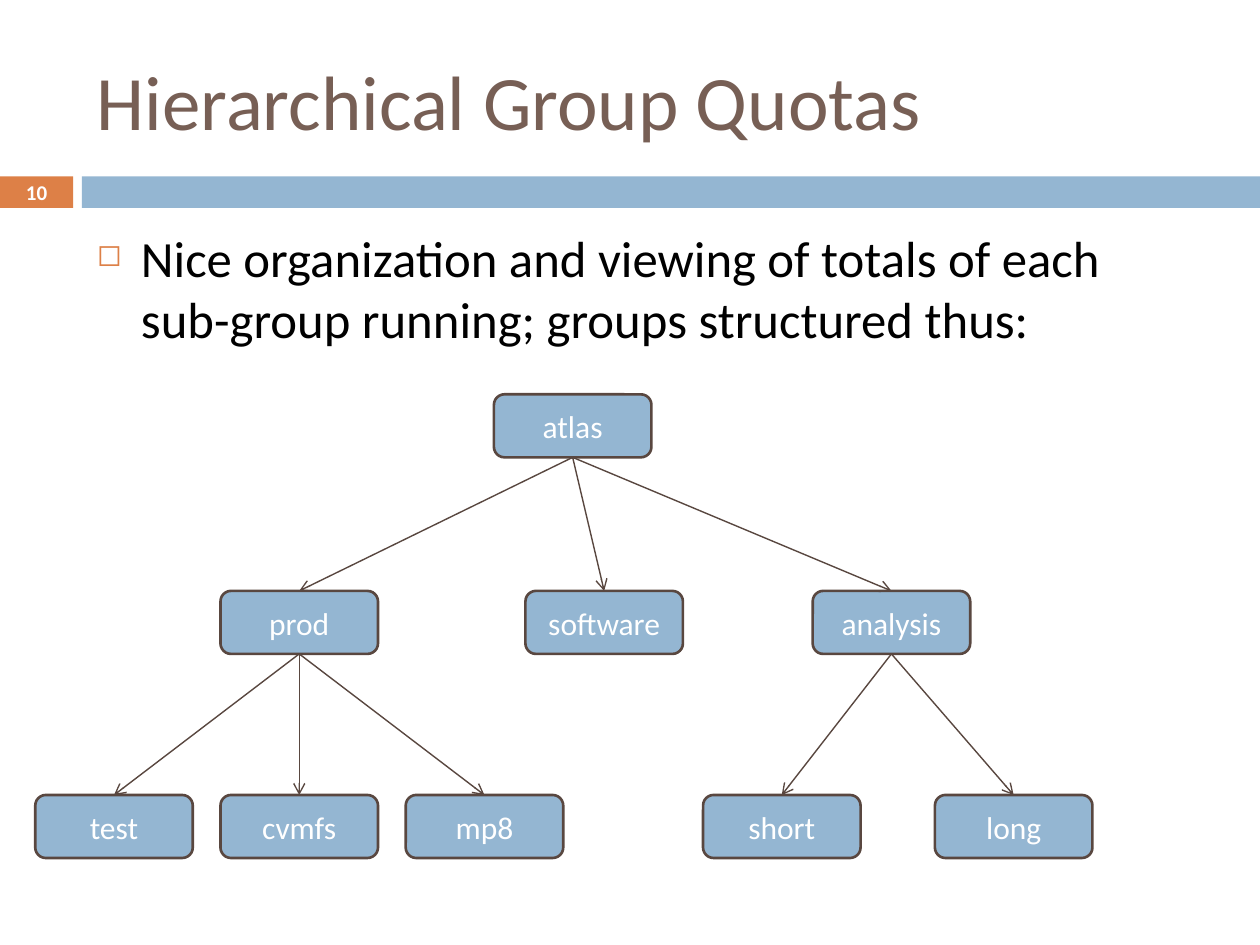
from lxml import etree
from pptx import Presentation
from pptx.dml.color import RGBColor
from pptx.enum import shapes as sh, text as tx
from pptx.oxml.ns import qn
from pptx.util import Inches, Pt

BLUE, ORANGE, BROWN = "94B6D2", "DD8047", "594740"


def paint(fmt, color):
    """Give a fill or a font a solid colour from a hex string."""
    if hasattr(fmt, "solid"):
        fmt.solid()
        fmt.fore_color.rgb = RGBColor.from_string(color)
    else:
        fmt.color.rgb = RGBColor.from_string(color)


def write(shape, words, size, color, align=tx.PP_ALIGN.CENTER):
    """Put one run of Calibri in a shape and return its paragraph."""
    frame = shape.text_frame
    frame.word_wrap = True
    frame.vertical_anchor = tx.MSO_ANCHOR.MIDDLE
    para = frame.paragraphs[0]
    para.alignment = align
    run = para.add_run()
    run.text = words
    run.font.name = "Calibri"
    run.font.size = Pt(size)
    paint(run.font, color)
    return para


prs = Presentation()
prs.slide_width, prs.slide_height = Inches(10), Inches(7.5)
slide = prs.slides.add_slide(prs.slide_layouts[6])
parts = slide.shapes

# Band under the title, with the slide number at its left
for left, width, color in [(0, 0.58, ORANGE), (0.65, 9.35, BLUE)]:
    bar = parts.add_shape(sh.MSO_SHAPE.RECTANGLE, Inches(left), Inches(1.4),
                          Inches(width), Inches(0.25))
    bar.shadow.inherit = False
    paint(bar.fill, color)
    bar.line.fill.background()

num = parts.add_textbox(Inches(0), Inches(1.39), Inches(0.58), Inches(0.27))
num.text_frame.margin_top = num.text_frame.margin_bottom = 0
write(num, "10", 12, "FFFFFF").runs[0].font.bold = True

# Title and bullet
title = parts.add_textbox(Inches(0.67), Inches(0.25), Inches(8.92), Inches(1.08))
write(title, "Hierarchical Group Quotas", 44, "775F55", tx.PP_ALIGN.LEFT)

body = parts.add_textbox(Inches(0.67), Inches(1.75), Inches(8.92), Inches(4.92))
para = write(body, "Nice organization and viewing of totals of each "
             "sub-group running; groups structured thus:",
             29, "000000", tx.PP_ALIGN.LEFT)
body.text_frame.vertical_anchor = tx.MSO_ANCHOR.TOP
para.space_before = Pt(7)
props = para._p.get_or_add_pPr()
props.set("marL", str(Inches(0.35)))
props.set("indent", str(-Inches(0.35)))
tint = etree.SubElement(props, qn("a:buClr"))
etree.SubElement(tint, qn("a:srgbClr"), val=ORANGE)
etree.SubElement(props, qn("a:buSzPct"), val="60000")
etree.SubElement(props, qn("a:buChar"), char="◻")

# Group tree: name, parent, left edge, level
rows = [3.13, 4.69, 6.31]
groups = [
    ("atlas", None, 3.92, 0),
    ("prod", "atlas", 1.75, 1),
    ("software", "atlas", 4.17, 1),
    ("analysis", "atlas", 6.45, 1),
    ("test", "prod", 0.28, 2),
    ("cvmfs", "prod", 1.75, 2),
    ("mp8", "prod", 3.22, 2),
    ("short", "analysis", 5.58, 2),
    ("long", "analysis", 7.42, 2),
]
nodes = {}
for name, parent, left, level in groups:
    node = parts.add_shape(sh.MSO_SHAPE.ROUNDED_RECTANGLE, Inches(left),
                           Inches(rows[level]), Inches(1.25), Inches(0.5))
    node.shadow.inherit = False
    paint(node.fill, BLUE)
    paint(node.line.fill, BROWN)
    node.line.width = Pt(1.5)
    write(node, name, 18, "FFFFFF")
    nodes[name] = node

# Arrows run from the bottom of a parent to the top of its child
for name, parent, left, level in groups:
    if parent is None:
        continue
    link = parts.add_connector(sh.MSO_CONNECTOR.STRAIGHT, 0, 0, 0, 0)
    link.begin_connect(nodes[parent], 2)
    link.end_connect(nodes[name], 0)
    paint(link.line.fill, BROWN)
    link.line.width = Pt(0.79)
    etree.SubElement(link.line._get_or_add_ln(), qn("a:tailEnd"), type="arrow")
    etree.SubElement(link._element.spPr, qn("a:effectLst"))

prs.save("out.pptx")
